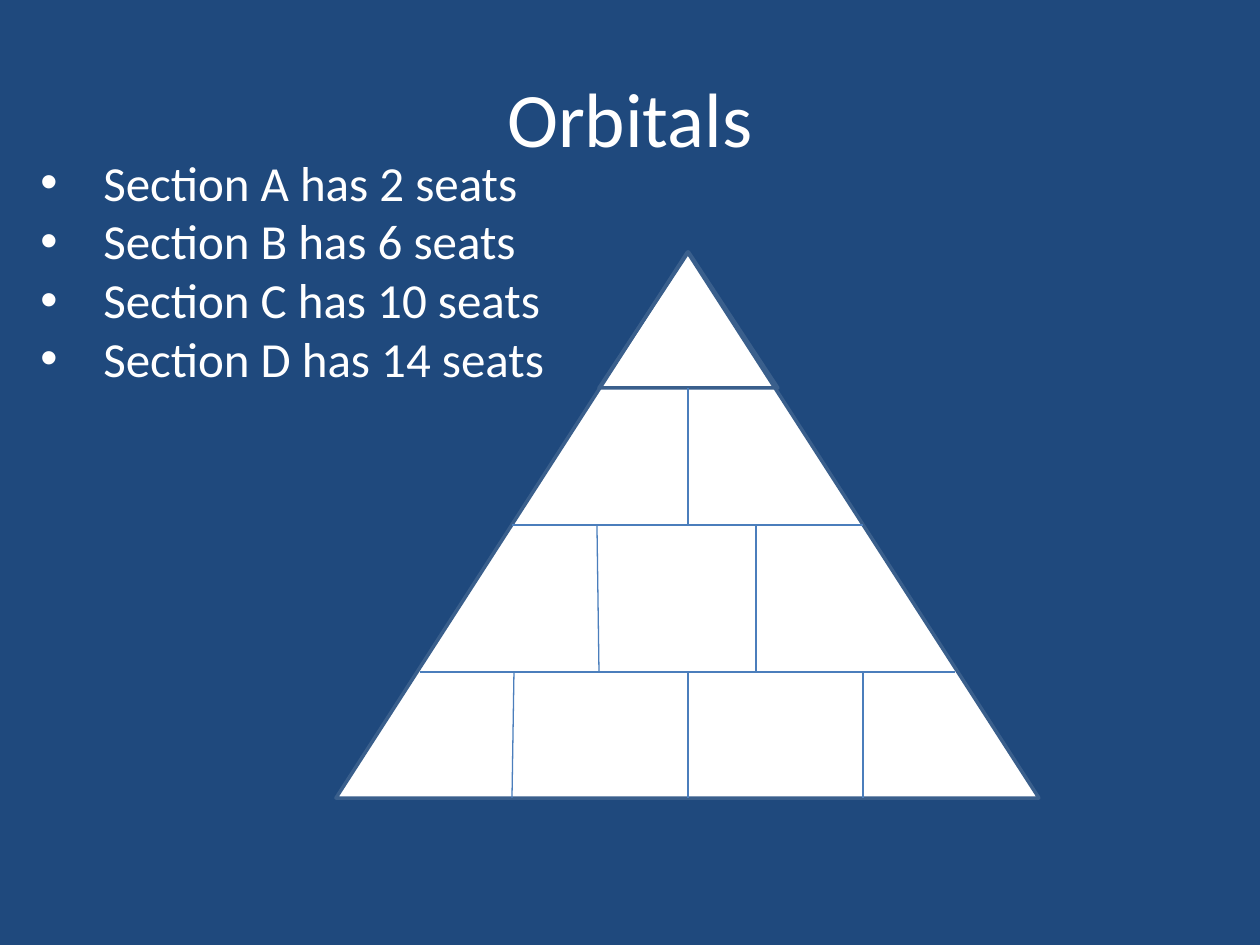
from lxml import etree
from pptx import Presentation
from pptx.dml.color import RGBColor
from pptx.enum.shapes import MSO_CONNECTOR, MSO_SHAPE
from pptx.enum.text import MSO_ANCHOR, PP_ALIGN
from pptx.oxml.ns import qn
from pptx.util import Pt

STRAIGHT = MSO_CONNECTOR.STRAIGHT
TRIANGLE = MSO_SHAPE.ISOSCELES_TRIANGLE
MIDDLE = MSO_ANCHOR.MIDDLE
CENTER = PP_ALIGN.CENTER

EMU_PER_PX = 914400 / 126
COLORS = {
    name: RGBColor.from_string(value)
    for name, value in {
        "background": "1F497D",
        "white": "FFFFFF",
        "outline": "3A5F8C",
        "divider": "4B7EBC",
    }.items()
}


def px(*lengths):
    """Turn pixel lengths into a list of EMU."""
    return [round(length * EMU_PER_PX) for length in lengths]


def add_span(para, text, size):
    span = para.add_run()
    span.text = text
    span.font.name = "Calibri"
    span.font.size = Pt(size)
    span.font.color.rgb = COLORS["white"]


deck = Presentation()
deck.slide_width, deck.slide_height = px(1260, 945)
page = deck.slides.add_slide(deck.slide_layouts[6])
page.background.fill.solid()
page.background.fill.fore_color.rgb = COLORS["background"]

# Title
title_box = page.shapes.add_textbox(*px(63, 38, 1134, 157))
title_box.text_frame.word_wrap = True
title_box.text_frame.vertical_anchor = MIDDLE
title_para = title_box.text_frame.paragraphs[0]
title_para.alignment = CENTER
add_span(title_para, "Orbitals", 44)

# Whole pyramid, then its top section
for bounds, filled in (((336, 252, 703, 546), True), ((599, 252, 179, 136), False)):
    triangle = page.shapes.add_shape(TRIANGLE, *px(*bounds))
    triangle.shadow.inherit = False
    if filled:
        triangle.fill.solid()
        triangle.fill.fore_color.rgb = COLORS["white"]
    else:
        triangle.fill.background()
    triangle.line.color.rgb = COLORS["outline"]
    triangle.line.width = Pt(2)

# Row borders, then the seat dividers of each row as (top x, bottom x)
ROW_TOPS = (388, 525, 672, 798)
ROW_DIVIDERS = (
    [(688, 688)],
    [(597, 599), (756, 756)],
    [(514, 512), (688, 688), (863, 863)],
)
dividers = [(512, 525, 863, 525), (420, 672, 955, 672)]
for top, bottom, row in zip(ROW_TOPS, ROW_TOPS[1:], ROW_DIVIDERS):
    dividers += [(top_x, top, bottom_x, bottom) for top_x, bottom_x in row]

for ends in dividers:
    divider = page.shapes.add_connector(STRAIGHT, *px(*ends))
    divider.line.color.rgb = COLORS["divider"]
    divider.line.width = Pt(0.75)
    etree.SubElement(divider._element.spPr, qn("a:effectLst"))

# Seats in each section
seats_box = page.shapes.add_textbox(*px(28, 146, 539, 289))
seats_box.text_frame.word_wrap = True
indent = px(63)[0]
for index, (section, seats) in enumerate(zip("ABCD", (2, 6, 10, 14))):
    frame = seats_box.text_frame
    para = frame.add_paragraph() if index else frame.paragraphs[0]
    properties = para._p.get_or_add_pPr()
    properties.set("marL", str(indent))
    properties.set("indent", str(-indent))
    etree.SubElement(properties, qn("a:buFont"), typeface="Arial")
    etree.SubElement(properties, qn("a:buChar"), char="•")
    add_span(para, f"Section {section} has {seats} seats", 28)

deck.save("out.pptx")
